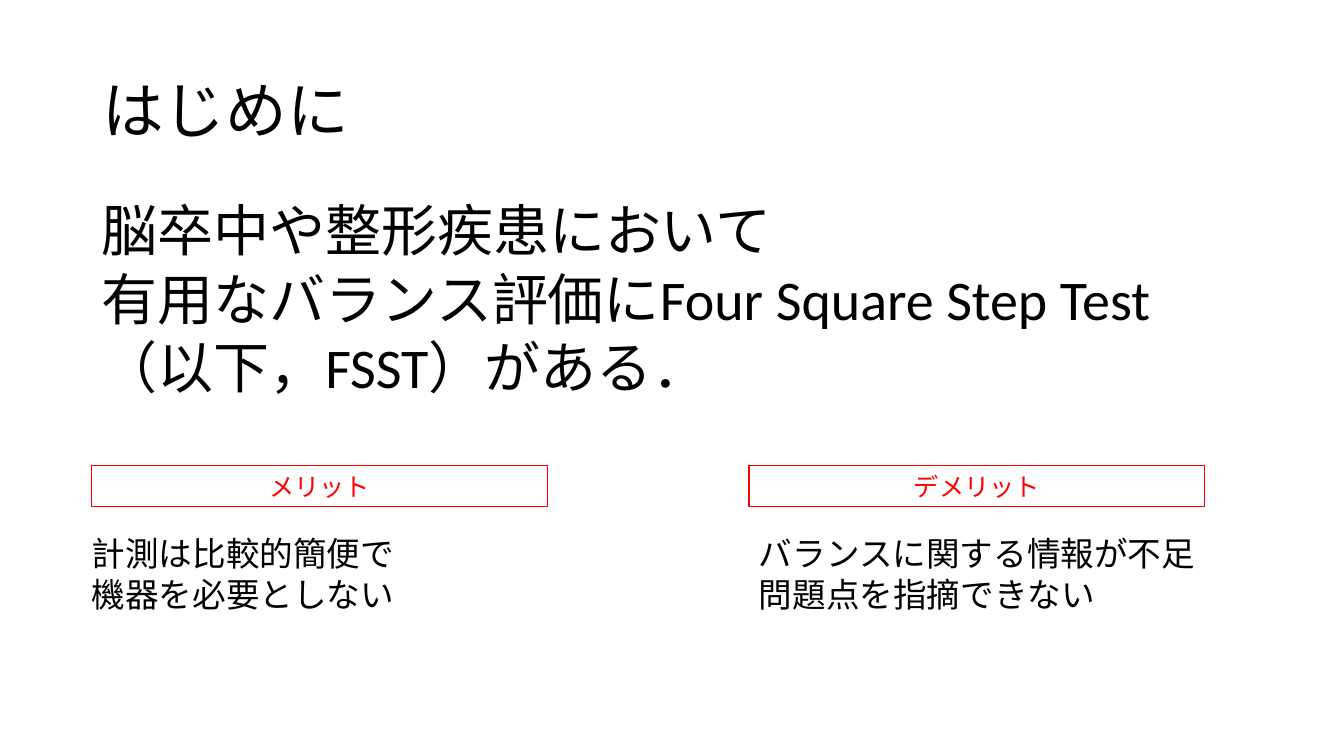
from pptx import Presentation
from pptx.dml.color import RGBColor
from pptx.enum import shapes, text
from pptx.oxml import ns
from pptx.util import Pt
from lxml import etree

BLACK = RGBColor(0, 0, 0)
RED = RGBColor(255, 0, 0)
JAPANESE = "Noto Sans CJK JP"
LATIN = "Calibri"
LEFT, RIGHT = 65.5, 535


def set_attrs(obj, **values):
    for name, value in values.items():
        setattr(obj, name, value)


def add_run(p, content, size, color):
    r = p.add_run()
    font = LATIN if content.isascii() else JAPANESE
    set_attrs(r, text=content)
    set_attrs(r.font, name=font, size=Pt(size))
    r.font.color.rgb = color
    ea = etree.SubElement(r._r.get_or_add_rPr(), ns.qn("a:ea"))
    ea.set("typeface", font)


def write(sp, lines, size, color=BLACK, **layout):
    tf = sp.text_frame
    frame = {"word_wrap": True, "vertical_anchor": layout.get("anchor", text.MSO_ANCHOR.TOP)}
    set_attrs(tf, **frame)
    for i, line in enumerate(lines):
        p = tf.paragraphs[0] if i == 0 else tf.add_paragraph()
        set_attrs(p, alignment=layout.get("align", text.PP_ALIGN.LEFT),
                  line_spacing=layout.get("spacing", Pt(round(size * 1.22, 1))))
        for content in line:
            add_run(p, content, size, color)


def add_text(s, box, lines, size, **layout):
    sp = s.shapes.add_textbox(*map(Pt, box))
    write(sp, lines, size, **layout)


def add_title(s, box, title):
    sp = s.shapes.title
    set_attrs(sp, **dict(zip(("left", "top", "width", "height"), map(Pt, box))))
    write(sp, [[title]], 44, anchor=text.MSO_ANCHOR.MIDDLE, spacing=0.9)


def add_label(s, left, label):
    sp = s.shapes.add_shape(shapes.MSO_SHAPE.RECTANGLE, Pt(left), Pt(332.5), Pt(325.5), Pt(29))
    sp.shadow.inherit = False
    sp.fill.background()
    sp.line.color.rgb = RED
    sp.line.width = Pt(0.75)
    write(sp, [[label]], 18, color=RED, align=text.PP_ALIGN.CENTER)


def main():
    prs = Presentation()
    set_attrs(prs, slide_width=Pt(960), slide_height=Pt(540))
    s = prs.slides.add_slide(prs.slide_layouts[6])
    add_text(s, (66, 29, 828, 104), [["はじめに"]], 44,
             anchor=text.MSO_ANCHOR.MIDDLE, spacing=0.9)
    add_text(s, (LEFT, 135.5, 828, 152.5), [
        ["脳卒中や整形疾患において"],
        ["有用なバランス評価に", "Four Square Step Test", "（以下，", "FSST", "）がある．"],
    ], 40)
    add_text(s, (36, 376.5, 275, 65.5), [["計測は比較的簡便で"], ["機器を必要としない"]], 24,
             align=text.PP_ALIGN.CENTER)
    add_text(s, (RIGHT, 376.5, 335, 65.5), [["バランスに関する情報が不足"], ["問題点を指摘できない"]], 24)
    add_label(s, LEFT, "メリット")
    add_label(s, RIGHT, "デメリット")


    prs.save("out.pptx")


if __name__ == "__main__":
    main()
